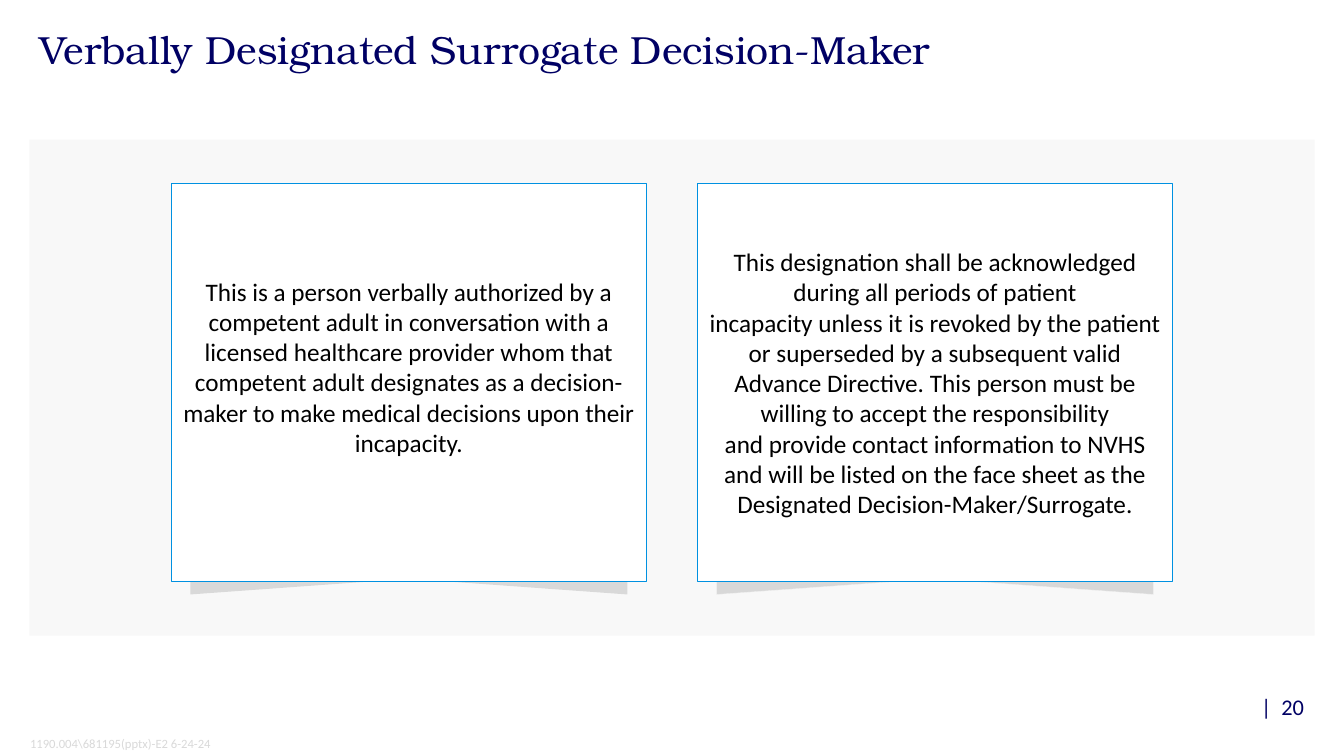
from pptx import Presentation
from pptx.dml.color import RGBColor
from pptx.enum.shapes import MSO_SHAPE
from pptx.enum.text import MSO_ANCHOR, MSO_AUTO_SIZE, PP_ALIGN
from pptx.util import Cm, Pt

RECTANGLE = MSO_SHAPE.RECTANGLE
TOP, MIDDLE = MSO_ANCHOR.TOP, MSO_ANCHOR.MIDDLE
LEFT, CENTER = PP_ALIGN.LEFT, PP_ALIGN.CENTER
NO_AUTOFIT = MSO_AUTO_SIZE.NONE

TITLE = "Verbally Designated Surrogate Decision-Maker"
FOOTER = "1190.004\\681195(pptx)-E2 6-24-24"
PAGE_NUMBER = "|  20"
TIE, NO_BREAK_SPACE = "~", chr(160)
CARDS = [
    {
        "text": "This is a person verbally authorized~by a competent adult in conversation "
                "with a licensed healthcare~provider whom that competent adult designates as a "
                "decision-maker to make~medical decisions upon their incapacity.",
        "bottom_inset": 0.9, "shadow": "shadow_left", "shadow_line": None,
    },
    {
        "text": "This designation shall be~acknowledged during all periods of patient "
                "incapacity~unless it is~revoked by the patient or superseded by a subsequent "
                "valid Advance~Directive. This person must be willing to accept the "
                "responsibility and~provide contact information to NVHS and will be listed on "
                "the face~sheet as the Designated Decision-Maker/Surrogate.",
        "bottom_inset": 0.1, "shadow": "shadow_right", "shadow_line": "shadow_edge",
    },
]
COLORS = {
    "navy": "000064", "panel": "F8F8F8", "card": "FFFFFF", "card_edge": "0091E1",
    "text": "000000", "footer": "D9D9D9", "shadow_left": "D9D9D9",
    "shadow_right": "D8D8D8", "shadow_edge": "F2F2F2",
}
TITLE_FONT, BODY_FONT = "TeX Gyre Bonum", "Calibri"
MARGIN, CONTENT_WIDTH = 0.74, 32.39
CARD_LEFT, CARD_TOP, CARD_WIDTH, CARD_HEIGHT = 4.32, 4.61, 11.97, 10.03
CARD_PITCH = 13.26
SHADOW_INSET, SHADOW_WIDTH, SHADOW_DROP = 0.48, 4.71, 0.34
HAIRLINE = Pt(0.23)


def color(name):
    return RGBColor.from_string(COLORS[name])


def paint(shape, fill, line=None):
    shape.shadow.inherit = False
    shape.fill.solid()
    shape.fill.fore_color.rgb = color(fill)
    if line:
        shape.line.color.rgb = color(line)
        shape.line.width = HAIRLINE
    else:
        shape.line.fill.background()


def write(shape, text, size, color_name, font=BODY_FONT, align=LEFT, anchor=TOP):
    frame = shape.text_frame
    frame.auto_size = NO_AUTOFIT
    frame.word_wrap = True
    frame.vertical_anchor = anchor
    paragraph = frame.paragraphs[0]
    paragraph.text = text.replace(TIE, NO_BREAK_SPACE)
    paragraph.alignment = align
    paragraph.font.name = font
    paragraph.font.size = Pt(size)
    paragraph.font.color.rgb = color(color_name)
    return frame


def add_shadow(slide, outer, inner, top, card):
    builder = slide.shapes.build_freeform(Cm(outer), Cm(top))
    builder.add_line_segments([(Cm(outer), Cm(top + SHADOW_DROP)), (Cm(inner), Cm(top))])
    paint(builder.convert_to_shape(), card["shadow"], card["shadow_line"])


def add_card(slide, left, card):
    right, bottom = left + CARD_WIDTH, CARD_TOP + CARD_HEIGHT
    for edge, direction in ((left, 1), (right, -1)):
        outer = edge + direction * SHADOW_INSET
        add_shadow(slide, outer, outer + direction * SHADOW_WIDTH, bottom, card)
    shape = slide.shapes.add_shape(
        RECTANGLE, Cm(left), Cm(CARD_TOP), Cm(CARD_WIDTH), Cm(CARD_HEIGHT))
    paint(shape, "card", "card_edge")
    frame = write(shape, card["text"], 18, "text", align=CENTER, anchor=MIDDLE)
    frame.margin_bottom = Cm(card["bottom_inset"])


def main():
    presentation = Presentation()
    presentation.slide_width, presentation.slide_height = Cm(33.87), Cm(19.05)
    slide = presentation.slides.add_slide(presentation.slide_layouts[5])

    title = slide.shapes.title
    title.left, title.top = Cm(MARGIN), Cm(0.64)
    title.width, title.height = Cm(CONTENT_WIDTH), Cm(2.44)
    frame = write(title, TITLE, 28, "navy", TITLE_FONT)
    frame.paragraphs[0].line_spacing = 0.9

    panel = slide.shapes.add_shape(
        RECTANGLE, Cm(MARGIN), Cm(3.52), Cm(CONTENT_WIDTH), Cm(12.5))
    paint(panel, "panel")

    for index, card in enumerate(CARDS):
        add_card(slide, CARD_LEFT + index * CARD_PITCH, card)

    footer = slide.shapes.add_textbox(Cm(0.76), Cm(18.41), Cm(8.05), Cm(0.64))
    write(footer, FOOTER, 9, "footer").margin_left = 0

    page_number = slide.shapes.add_textbox(Cm(31.78), Cm(17.2), Cm(1.65), Cm(1.22))
    frame = write(page_number, PAGE_NUMBER, 16, "navy", anchor=MIDDLE)
    frame.margin_left = frame.margin_right = 0

    presentation.save("out.pptx")


if __name__ == "__main__":
    main()
